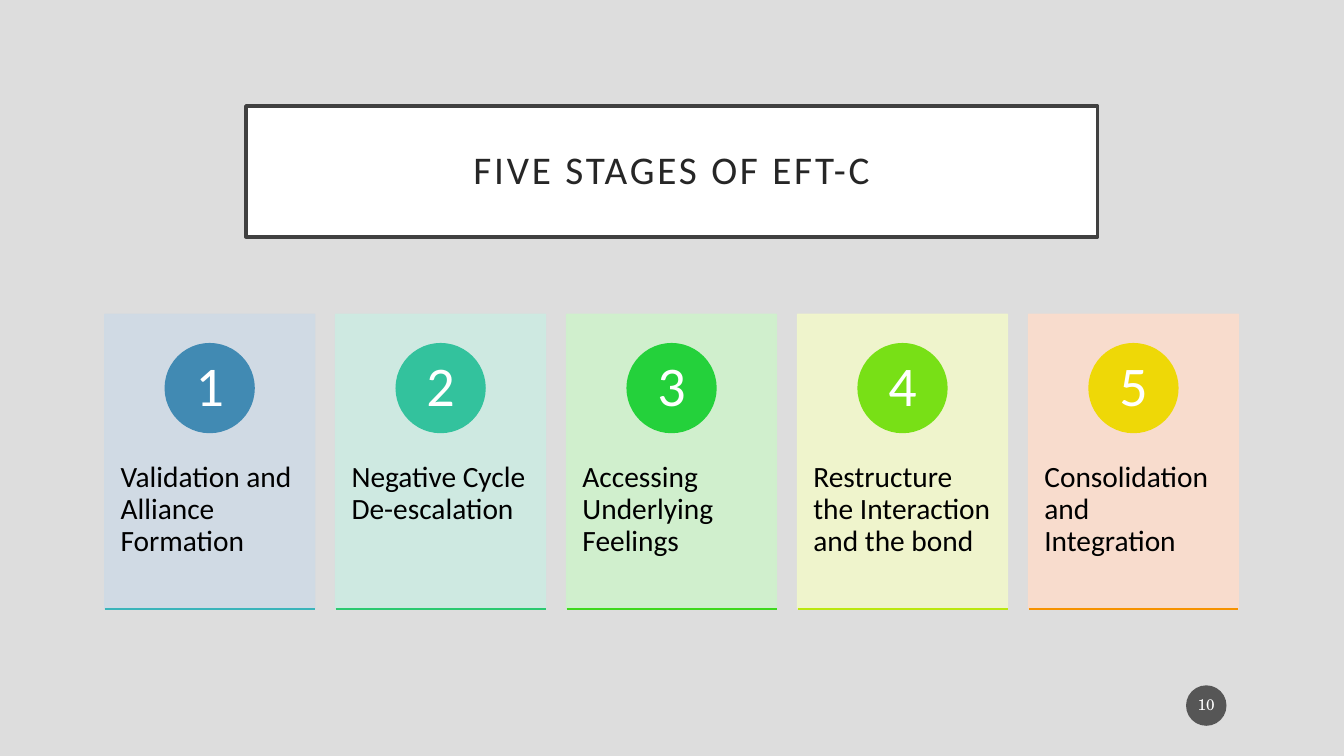
from lxml import etree
from pptx import Presentation
from pptx.dml.color import RGBColor
from pptx.enum.shapes import MSO_CONNECTOR, MSO_SHAPE
from pptx.enum.text import MSO_ANCHOR, MSO_AUTO_SIZE, PP_ALIGN
from pptx.oxml.ns import qn
from pptx.util import Cm, Pt

RECTANGLE, OVAL = MSO_SHAPE.RECTANGLE, MSO_SHAPE.OVAL
STRAIGHT = MSO_CONNECTOR.STRAIGHT
LEFT, CENTER = PP_ALIGN.LEFT, PP_ALIGN.CENTER
TOP, MIDDLE = MSO_ANCHOR.TOP, MSO_ANCHOR.MIDDLE
NO_AUTOFIT = MSO_AUTO_SIZE.NONE

BACKGROUND = RGBColor(0xDD, 0xDD, 0xDD)
WHITE = RGBColor(0xFF, 0xFF, 0xFF)
BLACK = RGBColor(0x00, 0x00, 0x00)
TITLE_TEXT = RGBColor(0x26, 0x26, 0x26)
TITLE_BORDER = RGBColor(0x40, 0x40, 0x40)
PAGE_BADGE = RGBColor(0x1D, 0x1D, 0x1D)

STAGES = [
    ("Validation and Alliance Formation", RGBColor(0xCF, 0xDA, 0xE5),
     RGBColor(0x41, 0x8A, 0xB3), RGBColor(0x3A, 0xB4, 0xBA)),
    ("Negative Cycle De-escalation", RGBColor(0xCD, 0xEB, 0xE2),
     RGBColor(0x33, 0xC2, 0x9D), RGBColor(0x2B, 0xC9, 0x70)),
    ("Accessing Underlying Feelings", RGBColor(0xCF, 0xF1, 0xCC),
     RGBColor(0x24, 0xD1, 0x3B), RGBColor(0x3E, 0xD8, 0x1D)),
    ("Restructure the Interaction and the bond", RGBColor(0xF1, 0xF7, 0xCB),
     RGBColor(0x78, 0xE0, 0x16), RGBColor(0xBA, 0xE7, 0x0F)),
    ("Consolidation and Integration", RGBColor(0xFB, 0xDC, 0xCC),
     RGBColor(0xEE, 0xD8, 0x07), RGBColor(0xF6, 0x92, 0x00)),
]

CARD_LEFT, CARD_TOP = Cm(2.64), Cm(7.92)
CARD_WIDTH, CARD_HEIGHT = Cm(5.29), Cm(7.42)
CARD_STEP = Cm(5.82)
CIRCLE_SIZE, CIRCLE_DROP = Cm(2.24), Cm(0.74)
LABEL_DROP, LABEL_HEIGHT = Cm(2.82), Cm(4.45)


def write_text(shape, text, size, color, font="Calibri", align=CENTER,
               anchor=MIDDLE, inset=(0, 0), spacing=None):
    frame = shape.text_frame
    frame.word_wrap = True
    frame.auto_size = NO_AUTOFIT
    frame.vertical_anchor = anchor
    frame.margin_left = frame.margin_right = inset[0]
    frame.margin_top = frame.margin_bottom = inset[1]
    paragraph = frame.paragraphs[0]
    paragraph.alignment = align
    paragraph.line_spacing = 0.9
    run = paragraph.add_run()
    run.text = text
    run.font.name = font
    run.font.size = Pt(size)
    run.font.color.rgb = color
    if spacing:
        run.font._element.set("spc", str(spacing * 100))


def set_opacity(fill_parent, percent):
    color = fill_parent.find(qn("a:solidFill")).find(qn("a:srgbClr"))
    etree.SubElement(color, qn("a:alpha")).set("val", str(percent * 1000))


def add_filled(slide, kind, left, top, width, height, color, opacity=100,
               outlined=True):
    shape = slide.shapes.add_shape(kind, left, top, width, height)
    shape.shadow.inherit = False
    shape.fill.solid()
    shape.fill.fore_color.rgb = color
    if outlined:
        shape.line.color.rgb = color
        shape.line.width = Pt(1)
    else:
        shape.line.fill.background()
    if opacity < 100:
        properties = shape._element.spPr
        set_opacity(properties, opacity)
        if outlined:
            set_opacity(properties.find(qn("a:ln")), opacity)
    return shape


def add_rule(slide, left, top, width, color):
    rule = slide.shapes.add_connector(STRAIGHT, left, top, left + width, top)
    rule.line.color.rgb = color
    rule.line.width = Pt(1.5)
    etree.SubElement(rule._element.spPr, qn("a:effectLst"))


def add_title(slide, text):
    title = slide.shapes.title
    title.left, title.top = Cm(6.2), Cm(2.67)
    title.width, title.height = Cm(21.46), Cm(3.3)
    title.fill.solid()
    title.fill.fore_color.rgb = WHITE
    title.line.color.rgb = TITLE_BORDER
    title.line.width = Pt(2.5)
    write_text(title, text, 28, TITLE_TEXT, inset=(Cm(0.5), Cm(0.5)),
               spacing=2)


def add_stage(slide, number, label, card_color, circle_color, rule_color):
    left = CARD_LEFT + (number - 1) * CARD_STEP
    add_filled(slide, RECTANGLE, left, CARD_TOP, CARD_WIDTH, CARD_HEIGHT,
               card_color, opacity=90)
    description = slide.shapes.add_textbox(left, CARD_TOP + LABEL_DROP,
                                           CARD_WIDTH, LABEL_HEIGHT)
    write_text(description, label, 21, BLACK, align=LEFT, anchor=TOP,
               inset=(Cm(0.4), Cm(0.91)))
    circle = add_filled(slide, OVAL, left + (CARD_WIDTH - CIRCLE_SIZE) // 2,
                        CARD_TOP + CIRCLE_DROP, CIRCLE_SIZE, CIRCLE_SIZE,
                        circle_color)
    write_text(circle, str(number), 40, WHITE)
    add_rule(slide, left, CARD_TOP + CARD_HEIGHT, CARD_WIDTH, rule_color)


def add_page_number(slide, number):
    badge = add_filled(slide, OVAL, Cm(29.89), Cm(17.27), Cm(1.02), Cm(1.02),
                       PAGE_BADGE, opacity=70, outlined=False)
    write_text(badge, number, 11, WHITE, font="TeX Gyre Schola")


def main():
    deck = Presentation()
    deck.slide_width, deck.slide_height = Cm(33.87), Cm(19.05)
    slide = deck.slides.add_slide(deck.slide_layouts[5])
    slide.background.fill.solid()
    slide.background.fill.fore_color.rgb = BACKGROUND
    add_title(slide, "FIVE STAGES OF EFT-C")
    add_page_number(slide, "10")
    for number, stage in enumerate(STAGES, start=1):
        add_stage(slide, number, *stage)
    deck.save("out.pptx")


if __name__ == "__main__":
    main()
